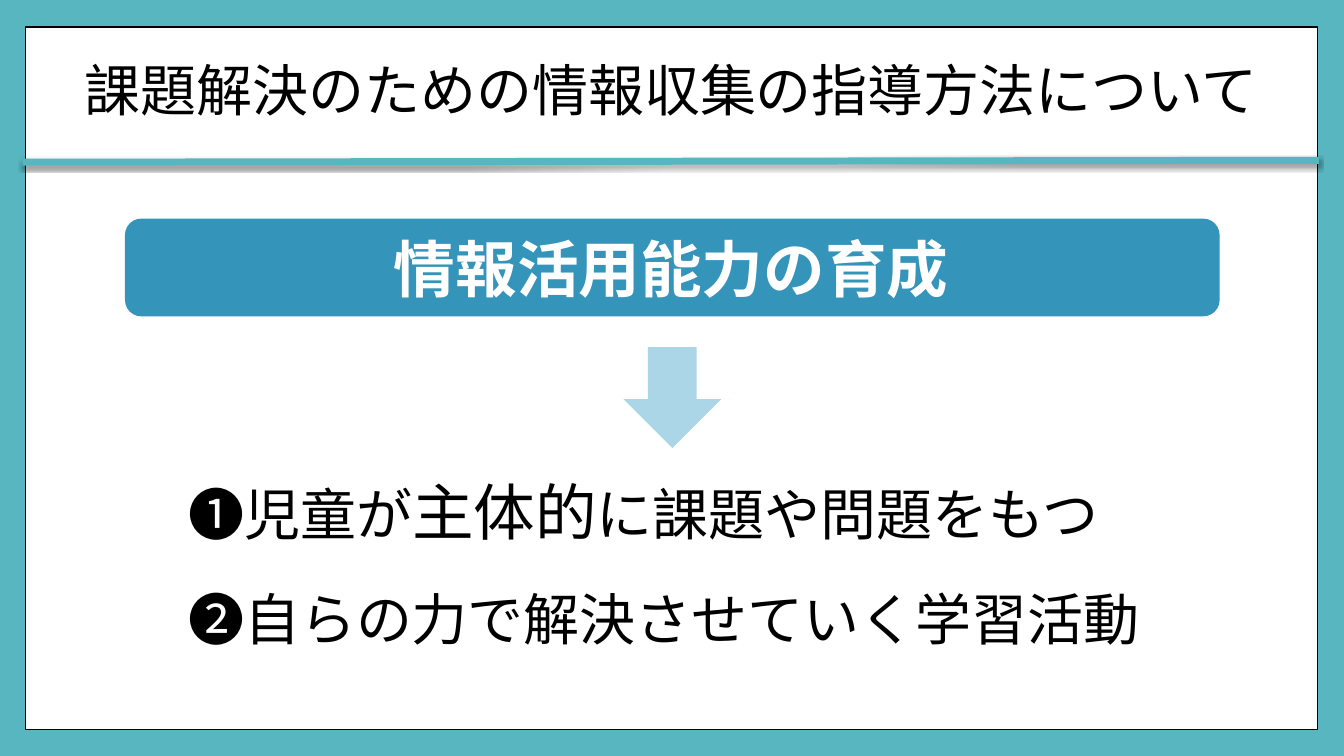
"""Build a slide on teaching information gathering for problem solving."""
from lxml import etree
from pptx import Presentation
from pptx import util as u
from pptx.dml import color
from pptx.enum import shapes, text
from pptx.oxml import ns, parse_xml

COLOURS = {
    "teal": "58B6C0",
    "white": "FFFFFF",
    "black": "000000",
    "blue": "3494BA",
    "pale": "AAD6E7",
}
JAPANESE = "Noto Sans CJK JP"
LATIN = "Cabin"
BODY_SIZE = 40
STRONG_SIZE = 44
STATEMENT_TOP = 334.8
STATEMENT_STEP = 79.2
STATEMENTS = [
    [("❶児童が", BODY_SIZE), ("主体的", STRONG_SIZE),
     ("に課題や問題をもつ", BODY_SIZE)],
    [("❷自らの力で解決させていく学習活動", BODY_SIZE)],
]


def rgb(name):
    """Return the named colour."""
    return color.RGBColor.from_string(COLOURS[name])


def points(*lengths):
    """Return the lengths as points."""
    return [u.Pt(length) for length in lengths]


def apply(target, values):
    """Set each named attribute on the target."""
    for name, value in values.items():
        setattr(target, name, value)


def write(box, spans, colour="black", font=JAPANESE, bold=False,
          align=text.PP_ALIGN.LEFT, spacing=1.0, anchor=text.MSO_ANCHOR.TOP):
    """Fill a box with one paragraph of (wording, size) spans."""
    apply(box.text_frame, {"word_wrap": True, "vertical_anchor": anchor})
    para = box.text_frame.paragraphs[0]
    apply(para, {"alignment": align, "line_spacing": spacing})
    for wording, size in spans:
        span = para.add_run()
        span.text = wording
        apply(span.font, {"size": u.Pt(size), "bold": bold, "name": font})
        span.font.color.rgb = rgb(colour)
    for latin in box.element.iter(ns.qn("a:latin")):
        latin.addnext(etree.Element(ns.qn("a:ea"), typeface=JAPANESE))


def add_text(parent, place, spans, **style):
    """Add a text box holding the spans."""
    write(parent.add_textbox(*points(*place)), spans, **style)


def add_block(parent, kind, place, fill, line=None):
    """Add a flat preset shape, outlined if a line colour is given."""
    block = parent.add_shape(kind, *points(*place))
    block.shadow.inherit = False
    block.fill.solid()
    block.fill.fore_color.rgb = rgb(fill)
    if line:
        block.line.color.rgb = rgb(line)
        block.line.width = u.Pt(1)
    else:
        block.line.fill.background()
    return block


def add_rule(parent, ends):
    """Add the thick square-ended divider with its soft shadow."""
    rule = parent.add_connector(shapes.MSO_CONNECTOR.STRAIGHT, *points(*ends))
    rule.line.color.rgb = rgb("teal")
    rule.line.width = u.Pt(5)
    properties = rule.element.spPr
    properties.find(ns.qn("a:ln")).set("cap", "sq")
    properties.append(parse_xml(
        f'<a:effectLst {ns.nsdecls("a")}>'
        f'<a:outerShdw blurRad="{u.Pt(3)}" dist="{u.Pt(2)}" dir="5400000" '
        f'rotWithShape="0"><a:srgbClr val="{COLOURS["black"]}">'
        '<a:alpha val="45000"/></a:srgbClr></a:outerShdw></a:effectLst>'))


def add_title(page, wording):
    """Bring the title placeholder in front of the panel and fill it."""
    title = page.shapes.title
    sides = ("left", "top", "width", "height")
    apply(title, dict(zip(sides, points(18.7, 25.9, 921.6, 82.1))))
    title.element.getparent().append(title.element)
    write(title, [(wording, BODY_SIZE)], font=LATIN, spacing=0.9,
          align=text.PP_ALIGN.CENTER, anchor=text.MSO_ANCHOR.MIDDLE)


def add_banner(parent, wording):
    """Add the grouped rounded banner and its label."""
    banner = parent.add_group_shape().shapes
    add_block(banner, shapes.MSO_SHAPE.ROUNDED_RECTANGLE,
              (89.3, 156.2, 781.9, 69.8), "blue")
    add_text(banner, (239.8, 161.3, 479.5, 60.5), [(wording, STRONG_SIZE)],
             colour="white", bold=True, align=text.PP_ALIGN.CENTER)


def add_statements(parent):
    """Add the statements at equal steps down the page."""
    for index, spans in enumerate(STATEMENTS):
        top = STATEMENT_TOP + index * STATEMENT_STEP
        height = 1.2 * max(size for _, size in spans) + 7.5
        add_text(parent, (127.4, top, 705.6, height), spans)


def main():
    """Build and save the deck."""
    deck = Presentation()
    apply(deck, {"slide_width": u.Pt(960), "slide_height": u.Pt(540)})
    page = deck.slides.add_slide(deck.slide_layouts[5])
    page.background.fill.solid()
    page.background.fill.fore_color.rgb = rgb("teal")
    add_block(page.shapes, shapes.MSO_SHAPE.RECTANGLE,
              (18, 19.4, 923, 501.8), "white", "black")
    add_rule(page.shapes, (18.7, 115.9, 939.6, 114.5))
    add_title(page, "課題解決のための情報収集の指導方法について")
    arrow = add_block(page.shapes, shapes.MSO_SHAPE.RIGHT_ARROW,
                      (444.2, 249.1, 72, 69.8), "pale")
    arrow.rotation = 90
    add_statements(page.shapes)
    add_banner(page.shapes, "情報活用能力の育成")
    deck.save("out.pptx")


if __name__ == "__main__":
    main()
